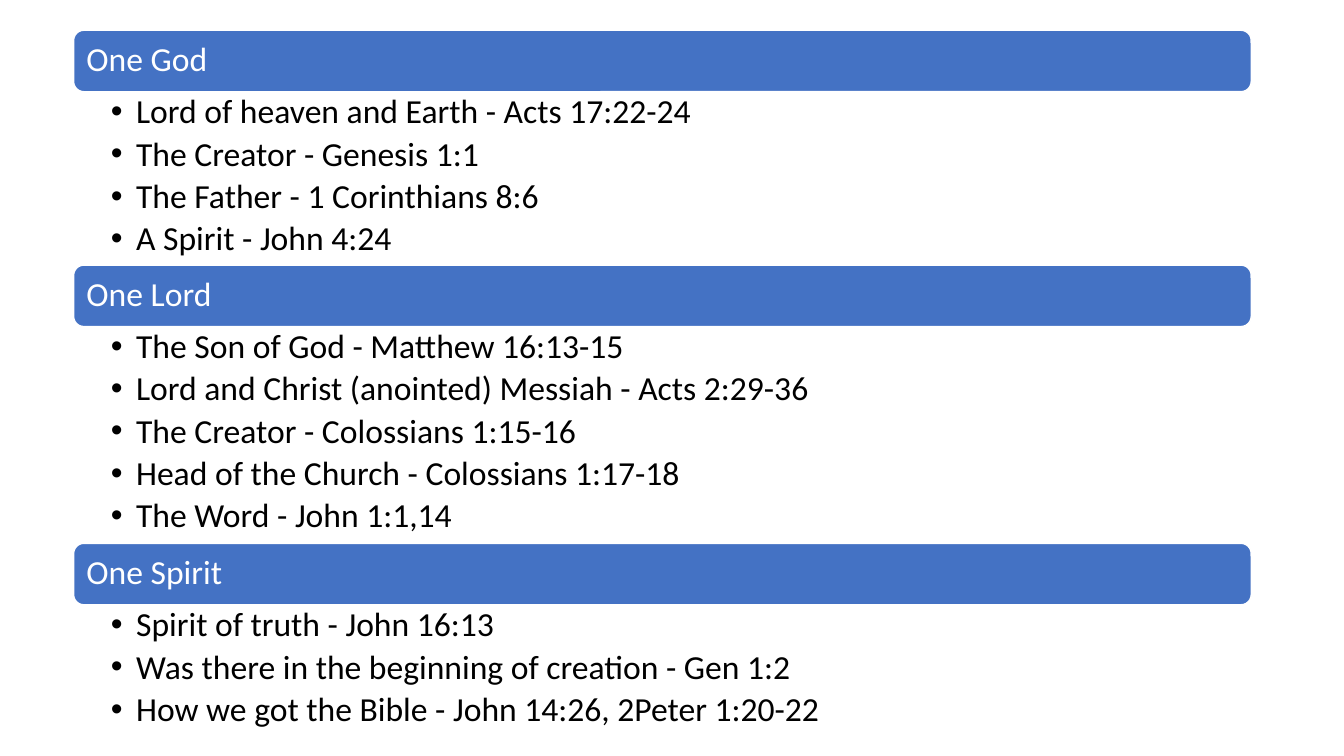
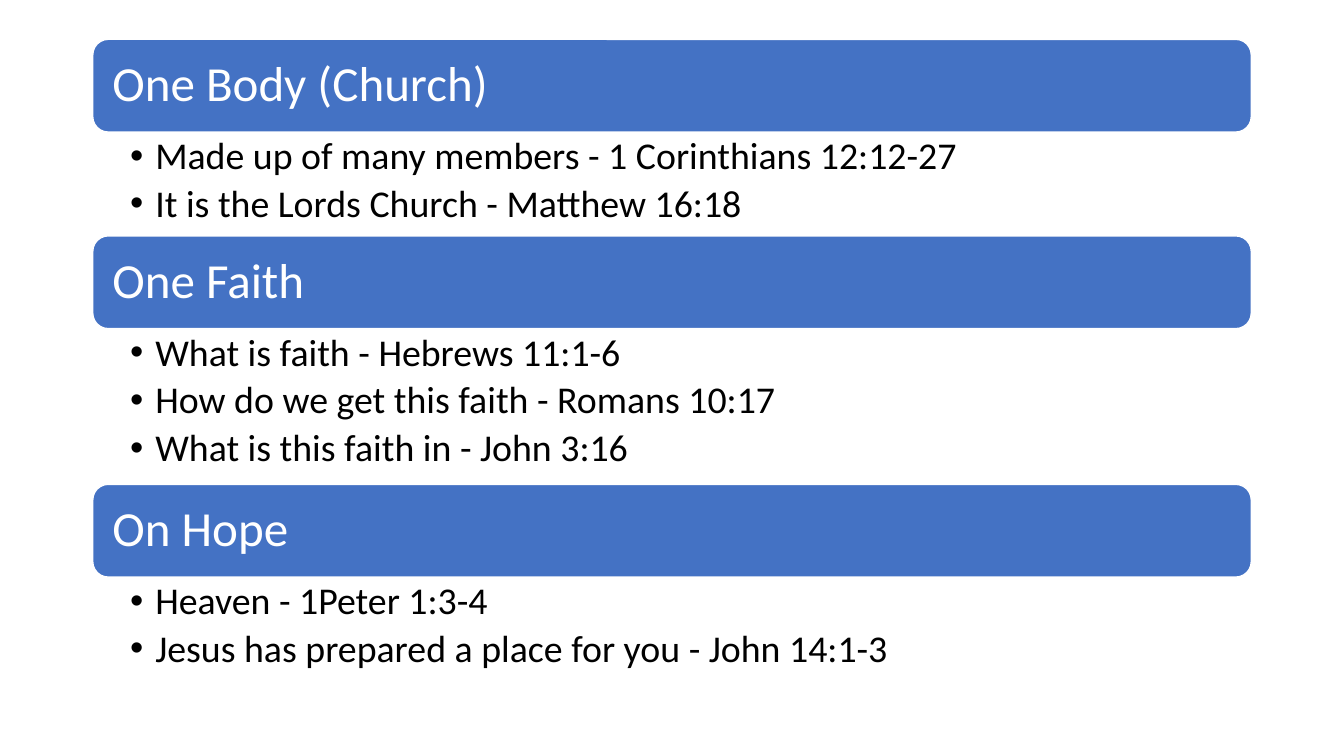
from lxml import etree
from pptx import Presentation
from pptx.dml.color import RGBColor
from pptx.enum import shapes, text
from pptx.oxml import ns
from pptx.util import Inches, Pt

BAND_BLUE, WHITE, BLACK = "4472C4", "FFFFFF", "000000"
FONT = "Calibri"
RIGHT_EDGE = 12.41
BULLET_INDENT = 0.25
LINE_SPACING = 0.9
POINT_GAP = 0.18  # space after a point, as a share of its text size


def color(hex_code):
    return RGBColor.from_string(hex_code)


def write(shape, lines, size, ink, insets, anchor):
    frame = shape.text_frame
    frame.word_wrap = True
    frame.vertical_anchor = anchor
    frame.margin_left, frame.margin_top, frame.margin_right, frame.margin_bottom = map(Inches, insets)
    frame.text = "\n".join(lines)
    for paragraph in frame.paragraphs:
        paragraph.alignment = text.PP_ALIGN.LEFT
        paragraph.line_spacing = LINE_SPACING
        font = paragraph.runs[0].font
        font.name, font.size, font.color.rgb = FONT, Pt(size), color(ink)


# Each slide: its measures in inches and points, then headings with their points
outlines = [
    dict(left=0.73, top=0.3, band=0.61, row=0.43, heading_size=24, point_size=24,
         heading_inset=0.1, point_insets=(0.37, 0.03, 0.19, 0.03),
         sections={
             "One God": ["Lord of heaven and Earth - Acts 17:22-24",
                         "The Creator - Genesis 1:1",
                         "The Father - 1 Corinthians 8:6",
                         "A Spirit - John 4:24"],
             "One Lord": ["The Son of God - Matthew 16:13-15",
                          "Lord and Christ (anointed) Messiah - Acts 2:29-36",
                          "The Creator - Colossians 1:15-16",
                          "Head of the Church - Colossians 1:17-18",
                          "The Word - John 1:1,14"],
             "One Spirit": ["Spirit of truth - John 16:13",
                            "Was there in the beginning of creation - Gen 1:2",
                            "How we got the Bible - John 14:26, 2Peter 1:20-22"],
         }),
    dict(left=0.92, top=0.39, band=0.92, row=1.03 / 2, heading_size=35, point_size=27,
         heading_inset=0.15, point_insets=(0.37, 0.05, 0.27, 0.05),
         sections={
             "One Body (Church)": ["Made up of many members - 1 Corinthians 12:12-27",
                                   "It is the Lords Church - Matthew 16:18"],
             "One Faith": ["What is faith - Hebrews 11:1-6",
                           "How do we get this faith - Romans 10:17",
                           "What is this faith in - John 3:16"],
             "On Hope": ["Heaven - 1Peter 1:3-4",
                         "Jesus has prepared a place for you - John 14:1-3"],
         }),
]

deck = Presentation()
deck.slide_width, deck.slide_height = Inches(13.33), Inches(7.5)
blank = deck.slide_layouts.get_by_name("Blank")

for outline in outlines:
    slide = deck.slides.add_slide(blank)
    left, width = Inches(outline["left"]), Inches(RIGHT_EDGE - outline["left"])
    y = outline["top"]

    for heading, points in outline["sections"].items():
        # Heading band
        band = slide.shapes.add_shape(shapes.MSO_SHAPE.ROUNDED_RECTANGLE,
                                      left, Inches(y), width, Inches(outline["band"]))
        band.shadow.inherit = False
        band.fill.solid()
        band.fill.fore_color.rgb = color(BAND_BLUE)
        band.line.color.rgb = color(WHITE)
        band.line.width = Pt(1)
        write(band, [heading], outline["heading_size"], WHITE,
              [outline["heading_inset"]] * 4, text.MSO_ANCHOR.MIDDLE)
        y += outline["band"]

        # Bulleted points below the band
        height = outline["row"] * len(points)
        verses = slide.shapes.add_textbox(left, Inches(y), width, Inches(height))
        write(verses, points, outline["point_size"], BLACK,
              outline["point_insets"], text.MSO_ANCHOR.TOP)
        for paragraph in verses.text_frame.paragraphs:
            paragraph.level = 1
            paragraph.space_after = Pt(outline["point_size"] * POINT_GAP)
            properties = paragraph._p.get_or_add_pPr()
            properties.set("marL", str(Inches(BULLET_INDENT)))
            properties.set("indent", str(-Inches(BULLET_INDENT)))
            etree.SubElement(properties, ns.qn("a:buFont"), typeface="Arial")
            etree.SubElement(properties, ns.qn("a:buChar"), char="•")
        y += height

deck.save("out.pptx")
